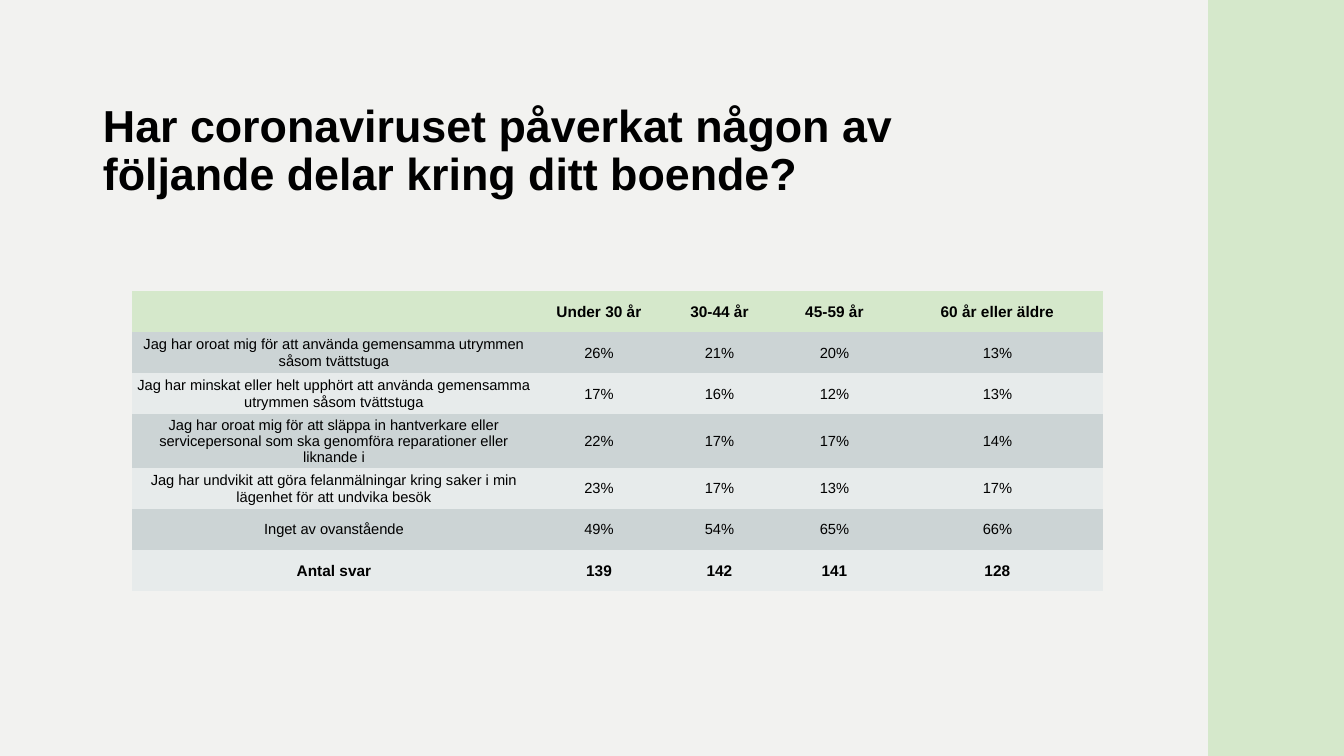
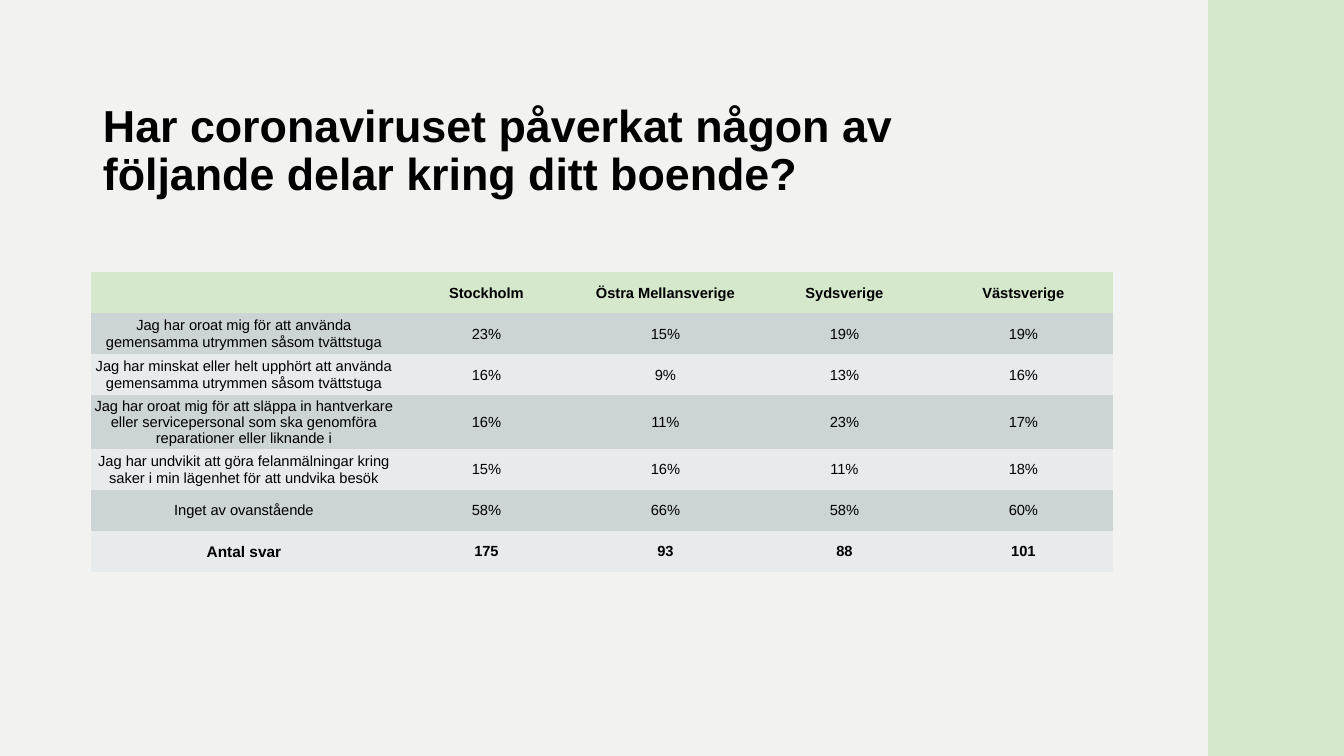
import pptx
import pptx.dml.color
import pptx.enum.shapes
import pptx.enum.text
import pptx.util

PX = 914400 / 100.8
FONT = "Arial"
INK, GREEN, PAPER = "000000", "D5E8CB", "F2F2F0"
ROW_FILLS = ["CCD4D5", "E7EBEB"]
PLAIN_TABLE_STYLE = "{2D5ABB26-0587-4C30-8999-92F81FD0307C}"
ROW_HEIGHT = 41
TITLE = "Har coronaviruset påverkat någon av följande delar kring ditt boende?"
STATEMENTS = [
    "Jag har oroat mig för att använda gemensamma utrymmen såsom tvättstuga",
    "Jag har minskat eller helt upphört att använda gemensamma utrymmen såsom tvättstuga",
    "Jag har oroat mig för att släppa in hantverkare eller servicepersonal "
    "som ska genomföra reparationer eller liknande i",
    "Jag har undvikit att göra felanmälningar kring saker i min lägenhet för att undvika besök",
    "Inget av ovanstående",
]

# One entry per slide: table place, column widths, bold size, groups, shares, totals
SURVEYS = [
    {
        "left": 132, "top": 291, "widths": [404, 126, 115, 115, 211], "bold_size": 11,
        "groups": ["Under 30 år", "30-44 år", "45-59 år", "60 år eller äldre"],
        "shares": [[26, 21, 20, 13], [17, 16, 12, 13], [22, 17, 17, 14],
                   [23, 17, 13, 17], [49, 54, 65, 66]],
        "totals": [139, 142, 141, 128],
    },
    {
        "left": 91, "top": 272, "widths": [306] + [179] * 4, "bold_size": 10.5,
        "groups": ["Stockholm", "Östra Mellansverige", "Sydsverige", "Västsverige"],
        "shares": [[23, 15, 19, 19], [16, 9, 13, 16], [16, 11, 23, 17],
                   [15, 16, 11, 18], [58, 66, 58, 60]],
        "totals": [175, 93, 88, 101],
    },
]


def px(*lengths):
    return [pptx.util.Emu(round(length * PX)) for length in lengths]


def paint(fill_or_font, color):
    if hasattr(fill_or_font, "solid"):
        fill_or_font.solid()
        fill_or_font.fore_color.rgb = pptx.dml.color.RGBColor.from_string(color)
    else:
        fill_or_font.color.rgb = pptx.dml.color.RGBColor.from_string(color)


deck = pptx.Presentation()
deck.slide_width, deck.slide_height = px(1344, 756)
paint(deck.slide_master.background.fill, PAPER)

for survey in SURVEYS:
    page = deck.slides.add_slide(deck.slide_layouts[6])

    # Side band
    band = page.shapes.add_shape(
        pptx.enum.shapes.MSO_SHAPE.RECTANGLE, *px(1208, 0, 136, 756))
    band.shadow.inherit = False
    paint(band.fill, GREEN)
    band.line.fill.background()

    # Title
    title = page.shapes.add_textbox(*px(93, 117, 972, 70)).text_frame
    title.word_wrap = True
    title.vertical_anchor = pptx.enum.text.MSO_ANCHOR.MIDDLE
    para = title.paragraphs[0]
    para.text = TITLE
    para.line_spacing = 0.9
    para.font.name, para.font.size, para.font.bold = FONT, pptx.util.Pt(32), True
    paint(para.font, INK)

    # Table contents
    rows = [[""] + survey["groups"]]
    for statement, shares in zip(STATEMENTS, survey["shares"]):
        rows.append([statement] + [f"{share}%" for share in shares])
    rows.append(["Antal svar"] + [str(total) for total in survey["totals"]])
    last = len(rows) - 1

    # Table
    widths = survey["widths"]
    table = page.shapes.add_table(
        len(rows), len(widths),
        *px(survey["left"], survey["top"], sum(widths), ROW_HEIGHT * len(rows))).table
    table.first_row = table.horz_banding = False
    table._tbl.tblPr[0].text = PLAIN_TABLE_STYLE
    for column, width in zip(table.columns, px(*widths)):
        column.width = width

    for r, texts in enumerate(rows):
        table.rows[r].height = px(ROW_HEIGHT)[0]
        for c, text in enumerate(texts):
            cell = table.cell(r, c)
            paint(cell.fill, GREEN if r == 0 else ROW_FILLS[(r - 1) % 2])
            cell.vertical_anchor = pptx.enum.text.MSO_ANCHOR.MIDDLE
            (cell.margin_left, cell.margin_top,
             cell.margin_right, cell.margin_bottom) = px(1, 1, 1, 0)
            bold = r in (0, last)
            size = survey["bold_size"] if bold else 10.5
            if r == last and c == 0:
                size = 11
            para = cell.text_frame.paragraphs[0]
            para.text = text
            para.alignment = pptx.enum.text.PP_ALIGN.CENTER
            para.font.name, para.font.size, para.font.bold = FONT, pptx.util.Pt(size), bold
            paint(para.font, INK)

deck.save("out.pptx")
